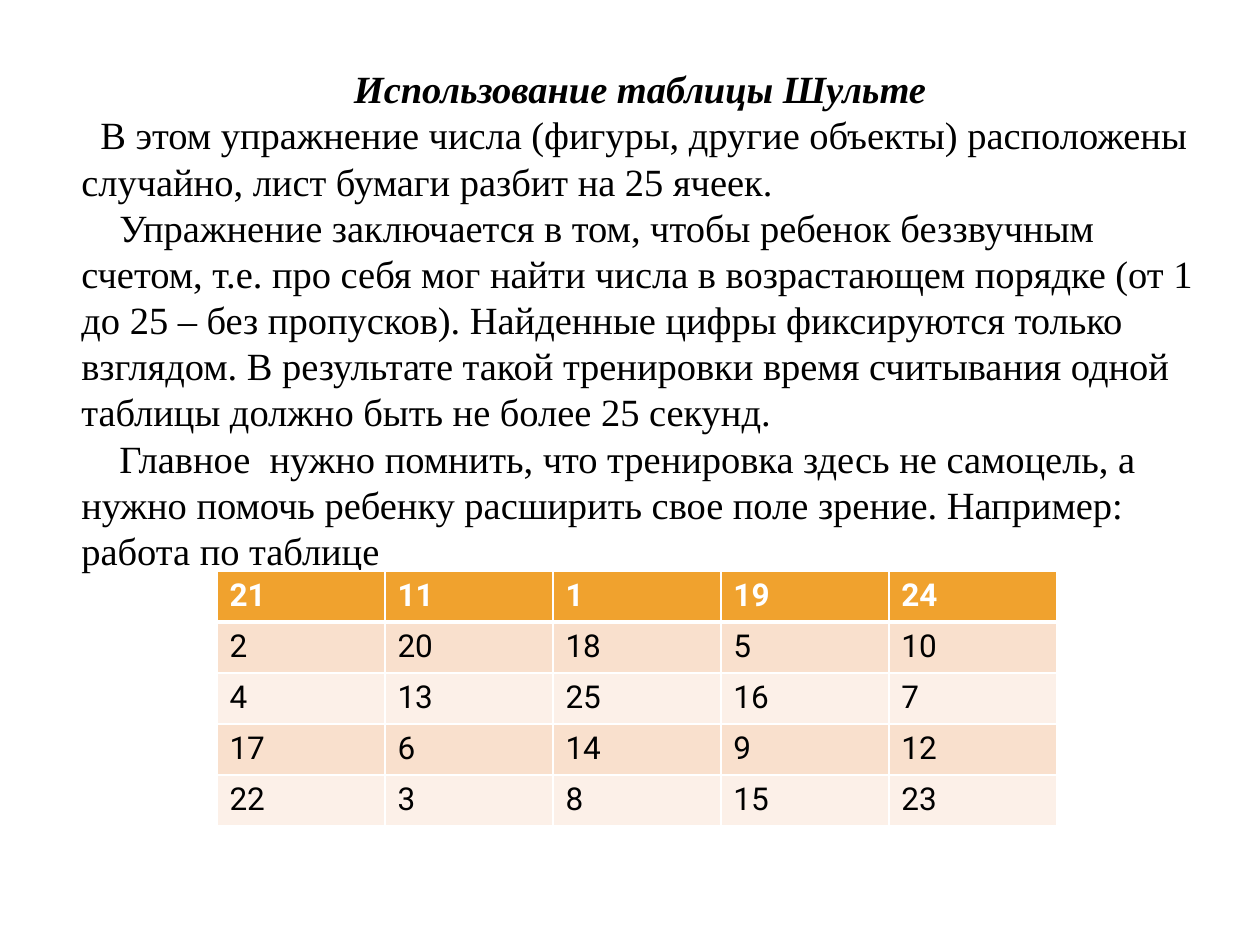
from dataclasses import dataclass

from lxml import etree
from pptx import Presentation
from pptx import util as u
from pptx.dml.color import RGBColor
from pptx.enum import text
from pptx.oxml import ns

PIXELS_PER_INCH = 126


@dataclass(frozen=True)
class Theme:
    body_font: str = "Times New Roman"
    table_font: str = "Roboto"
    body_size: int = 22
    table_size: int = 18
    ink: str = "000000"
    paper: str = "FFFFFF"
    header: str = "F0A22E"
    bands: tuple[str, str] = ("F9E0CD", "FCF0E8")
    border: int = 1
    header_border: int = 3


@dataclass(frozen=True)
class Box:
    left: int
    top: int
    width: int
    height: int


@dataclass(frozen=True)
class Passage:
    wording: str
    indent: int = 0
    heading: bool = False


THEME = Theme()
TEXT_BOX = Box(69, 59, 1142, 900)
TABLE_BOX = Box(217, 571, 840, 255)

PASSAGES = [
    Passage("Использование таблицы Шульте", heading=True),
    Passage(
        "В этом упражнение числа (фигуры, другие объекты) расположены "
        "случайно, лист бумаги разбит на 25 ячеек.",
        indent=19,
    ),
    Passage(
        "Упражнение заключается в том, чтобы ребенок беззвучным счетом, т.е. "
        "про себя мог найти числа в возрастающем порядке (от 1 до 25 – без "
        "пропусков). Найденные цифры фиксируются только взглядом. В результате "
        "такой тренировки время считывания одной таблицы должно быть не более "
        "25 секунд.",
        indent=38,
    ),
    Passage(
        "Главное  нужно помнить, что тренировка здесь не самоцель, а нужно "
        "помочь ребенку расширить свое поле зрение. Например:",
        indent=38,
    ),
    Passage("работа по таблице"),
]

SCHULTE_NUMBERS = [
    [21, 11, 1, 19, 24],
    [2, 20, 18, 5, 10],
    [4, 13, 25, 16, 7],
    [17, 6, 14, 9, 12],
    [22, 3, 8, 15, 23],
]


def px(length: int) -> u.Emu:
    return u.Emu(round(length * 914400 / PIXELS_PER_INCH))


def place(box: Box) -> tuple[u.Emu, ...]:
    return px(box.left), px(box.top), px(box.width), px(box.height)


def style_run(run, font: str, size: int, color: str, bold: bool, italic: bool = False) -> None:
    run.font.name = font
    run.font.size = u.Pt(size)
    run.font.bold = bold
    run.font.italic = italic
    run.font.color.rgb = RGBColor.from_string(color)


def draw_passages(slide, box: Box, passages: list[Passage]) -> None:
    text_frame = slide.shapes.add_textbox(*place(box)).text_frame
    text_frame.word_wrap = True
    text_frame.text = "\n".join(passage.wording for passage in passages)
    for paragraph, passage in zip(text_frame.paragraphs, passages):
        paragraph.alignment = text.PP_ALIGN.CENTER if passage.heading else text.PP_ALIGN.LEFT
        if passage.indent:
            properties = paragraph._p.get_or_add_pPr()
            properties.set("marL", "0")
            properties.set("indent", str(px(passage.indent)))
        for run in paragraph.runs:
            style_run(run, THEME.body_font, THEME.body_size, THEME.ink,
                      passage.heading, passage.heading)


def draw_borders(cell, widths: dict[str, int]) -> None:
    properties = cell._tc.get_or_add_tcPr()
    for position, (side, width) in enumerate(widths.items()):
        line = etree.Element(ns.qn(f"a:{side}"), w=str(u.Pt(width)))
        fill = etree.SubElement(line, ns.qn("a:solidFill"))
        etree.SubElement(fill, ns.qn("a:srgbClr"), val=THEME.paper)
        properties.insert(position, line)


def draw_table(slide, box: Box, numbers: list[list[int]]) -> None:
    row_count, column_count = len(numbers), len(numbers[0])
    table = slide.shapes.add_table(row_count, column_count, *place(box)).table
    for column in table.columns:
        column.width = px(box.width // column_count)
    for row in table.rows:
        row.height = px(box.height // row_count)
    for row_index, values in enumerate(numbers):
        is_header = row_index == 0
        fill = THEME.header if is_header else THEME.bands[(row_index - 1) % 2]
        widths = {
            "lnL": THEME.border,
            "lnR": THEME.border,
            "lnT": THEME.header_border if row_index == 1 else THEME.border,
            "lnB": THEME.header_border if is_header else THEME.border,
        }
        for column_index, value in enumerate(values):
            cell = table.cell(row_index, column_index)
            cell.text_frame.text = str(value)
            style_run(cell.text_frame.paragraphs[0].runs[0], THEME.table_font,
                      THEME.table_size, THEME.paper if is_header else THEME.ink, is_header)
            cell.fill.solid()
            cell.fill.fore_color.rgb = RGBColor.from_string(fill)
            draw_borders(cell, widths)


def main() -> None:
    presentation = Presentation()
    presentation.slide_width = px(1260)
    presentation.slide_height = px(945)
    slide = presentation.slides.add_slide(presentation.slide_layouts[6])
    draw_passages(slide, TEXT_BOX, PASSAGES)
    draw_table(slide, TABLE_BOX, SCHULTE_NUMBERS)
    presentation.save("out.pptx")


if __name__ == "__main__":
    main()
